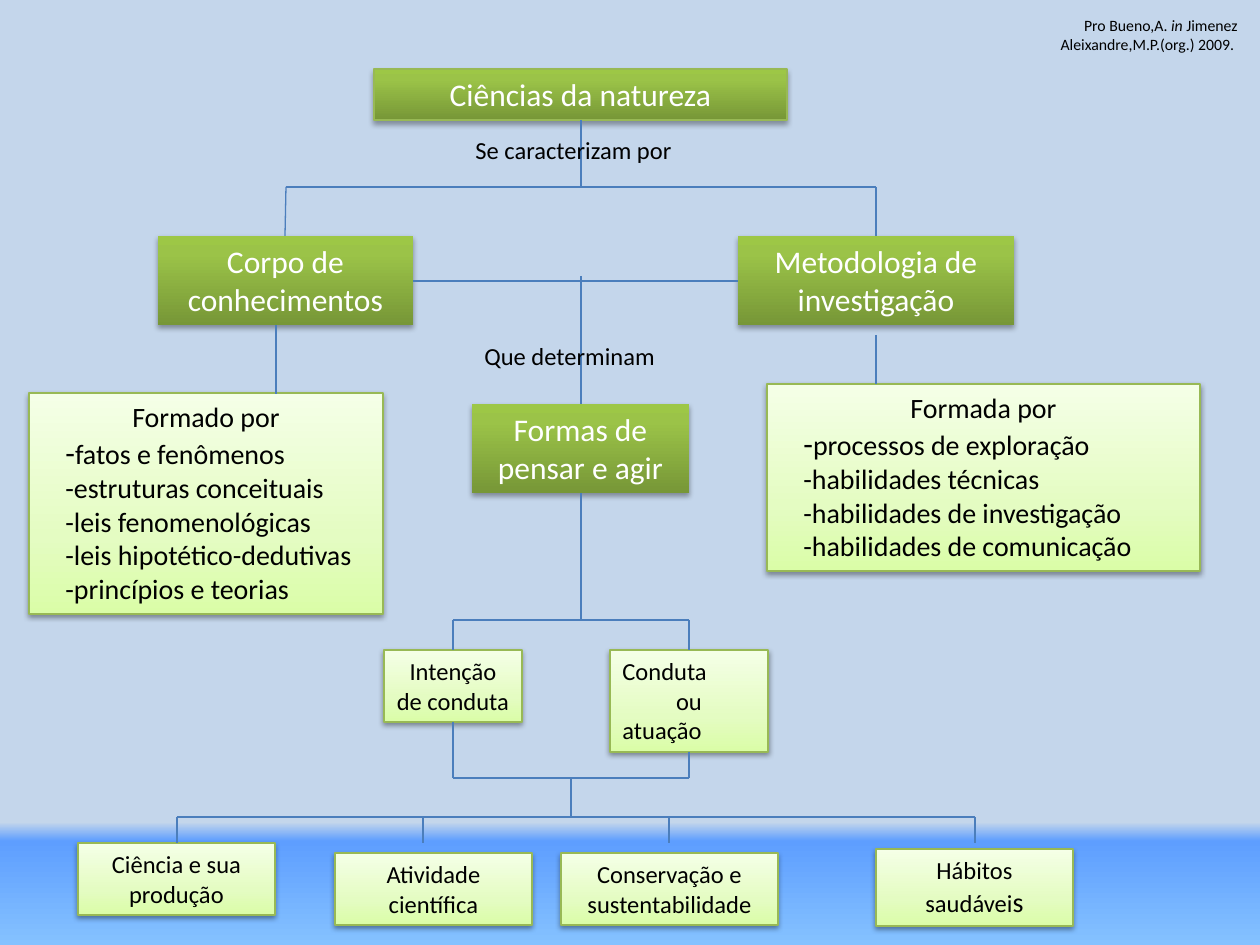
from dataclasses import dataclass

import lxml.etree
import pptx
import pptx.dml.color
import pptx.enum.shapes
import pptx.enum.text
import pptx.oxml.ns
import pptx.util

qn = pptx.oxml.ns.qn
Align = pptx.enum.text.PP_ALIGN
EMU_PER_PX = 914400 / 126


@dataclass(frozen=True)
class Style:
    stops: tuple
    line: str | None
    text: str
    shadow_alpha: int
    shadow_distance: float


@dataclass(frozen=True)
class Theme:
    font: str = "Calibri"
    text: str = "000000"
    connector: str = "4B7EBC"
    line_width: float = 0.75
    shadow: str = "000000"
    shadow_blur: float = 3.1
    background: tuple = ((87, "C4D6EB"), (89, "5E9EFF"), (100, "85C2FF"))
    title_size: int = 18
    list_size: int = 16
    label_size: int = 14
    credit_size: int = 9


THEME = Theme()
GREEN_STOPS = ((0, "779737"), (80, "9BC348"), (100, "9DC746"))
PALE_STOPS = ((0, "DAFDA7"), (35, "E4FCC2"), (100, "F5FFE7"))
TOPIC = Style(GREEN_STOPS, None, "FFFFFF", 35, 1.8)
ROOT = Style(GREEN_STOPS, "98B955", "FFFFFF", 35, 1.8)
DETAIL = Style(PALE_STOPS, "98B955", "000000", 38, 1.6)


@dataclass(frozen=True)
class Span:
    text: str
    size: int
    italic: bool = False


@dataclass(frozen=True)
class Para:
    spans: tuple[Span, ...]
    align: Align = Align.LEFT
    indent: int = 0


@dataclass(frozen=True)
class Box:
    left: int
    top: int
    width: int
    height: int
    paras: tuple[Para, ...]
    style: Style | None = None


def px(length: float) -> int:
    return round(length * EMU_PER_PX)


def rgb(color: str) -> pptx.dml.color.RGBColor:
    return pptx.dml.color.RGBColor.from_string(color)


def add_element(parent, tag: str, **attributes):
    return lxml.etree.SubElement(
        parent, qn(tag), {name: str(value) for name, value in attributes.items()})


def set_gradient(owner, fill, stops: tuple, angle: int) -> None:
    fill.gradient()
    gradient = owner.element.find(".//" + qn("a:gradFill"))
    for child in list(gradient):
        gradient.remove(child)
    stop_list = add_element(gradient, "a:gsLst")
    for position, color in stops:
        stop = add_element(stop_list, "a:gs", pos=position * 1000)
        add_element(stop, "a:srgbClr", val=color)
    add_element(gradient, "a:lin", ang=angle * 60000, scaled=0)


def add_shadow(shape, style: Style) -> None:
    shape.shadow.inherit = False
    effects = shape.element.spPr.find(qn("a:effectLst"))
    outer = add_element(effects, "a:outerShdw",
                        blurRad=pptx.util.Pt(THEME.shadow_blur),
                        dist=pptx.util.Pt(style.shadow_distance),
                        dir=90 * 60000, rotWithShape=0)
    color = add_element(outer, "a:srgbClr", val=THEME.shadow)
    add_element(color, "a:alpha", val=style.shadow_alpha * 1000)


def write_text(frame, paras: tuple[Para, ...], color: str) -> None:
    frame.word_wrap = True
    frame.auto_size = pptx.enum.text.MSO_AUTO_SIZE.SHAPE_TO_FIT_TEXT
    frame.vertical_anchor = pptx.enum.text.MSO_ANCHOR.TOP
    for index, para in enumerate(paras):
        paragraph = frame.add_paragraph() if index else frame.paragraphs[0]
        paragraph.alignment = para.align
        if para.indent:
            properties = paragraph._p.get_or_add_pPr()
            properties.set("marL", str(px(para.indent)))
            properties.set("indent", "0")
        for span in para.spans:
            run = paragraph.add_run()
            run.text = span.text
            run.font.name = THEME.font
            run.font.size = pptx.util.Pt(span.size)
            run.font.italic = span.italic
            run.font.color.rgb = rgb(color)


def draw_box(page, box: Box) -> None:
    place = [px(v) for v in (box.left, box.top, box.width, box.height)]
    style = box.style
    if style is None:
        shape = page.shapes.add_textbox(*place)
    else:
        shape = page.shapes.add_shape(
            pptx.enum.shapes.MSO_SHAPE.RECTANGLE, *place)
        set_gradient(shape, shape.fill, style.stops, 270)
        if style.line:
            shape.line.color.rgb = rgb(style.line)
            shape.line.width = pptx.util.Pt(THEME.line_width)
        else:
            shape.line.fill.background()
        add_shadow(shape, style)
    write_text(shape.text_frame, box.paras, style.text if style else THEME.text)


def draw_line(page, x1: int, y1: int, x2: int, y2: int) -> None:
    line = page.shapes.add_connector(
        pptx.enum.shapes.MSO_CONNECTOR.STRAIGHT, px(x1), px(y1), px(x2), px(y2))
    line.line.color.rgb = rgb(THEME.connector)
    line.line.width = pptx.util.Pt(THEME.line_width)
    add_element(line.element.spPr, "a:effectLst")


def single(text: str, size: int, align: Align = Align.CENTER) -> tuple[Para, ...]:
    return (Para((Span(text, size),), align),)


def listing(heading: str, first: str, *others: str) -> tuple[Para, ...]:
    size = THEME.list_size
    lead = Para((Span("-", THEME.title_size), Span(first, size)), indent=24)
    rest = (Para((Span("-" + item, size),), indent=24) for item in others)
    return (*single(heading, size), lead, *rest)


TITLE, LABEL = THEME.title_size, THEME.label_size
BOXES = (
    # Main topics
    Box(374, 69, 413, 51, single("Ciências da natureza", TITLE), ROOT),
    Box(158, 236, 255, 89, single("Corpo de conhecimentos", TITLE), TOPIC),
    Box(738, 236, 276, 89, single("Metodologia de investigação", TITLE), TOPIC),
    Box(472, 404, 217, 89, single("Formas de pensar e agir", TITLE), TOPIC),
    # Conduct
    Box(384, 650, 138, 72, single("Intenção de conduta", LABEL), DETAIL),
    Box(610, 650, 158, 102,
        single("Conduta", LABEL, Align.LEFT) + single("ou", LABEL)
        + single("atuação", LABEL, Align.LEFT), DETAIL),
    # Component lists
    Box(29, 393, 354, 221,
        listing("Formado por", "fatos e fenômenos", "estruturas conceituais",
                "leis fenomenológicas", "leis hipotético-dedutivas",
                "princípios e teorias"), DETAIL),
    Box(767, 384, 433, 187,
        listing("Formada por", "processos de exploração", "habilidades técnicas",
                "habilidades de investigação", "habilidades de comunicação"),
        DETAIL),
    # Outcomes
    Box(78, 843, 197, 72, single("Ciência e sua produção", LABEL), DETAIL),
    Box(335, 853, 197, 72, single("Atividade científica", LABEL), DETAIL),
    Box(561, 853, 217, 72, single("Conservação e sustentabilidade", LABEL), DETAIL),
    Box(876, 849, 197, 77,
        (Para((Span("Hábitos saudávei", LABEL), Span("s", THEME.list_size)),
              Align.CENTER),), DETAIL),
)

LINES = (
    # Root to the two branches
    (581, 120, 581, 187), (286, 187, 876, 187),
    (286, 187, 285, 236), (876, 187, 876, 236),
    # Between the branches and down to the ways of thinking
    (413, 281, 738, 281), (581, 276, 581, 404),
    # Branches to their lists
    (276, 325, 276, 394), (876, 335, 876, 384),
    # Around the conduct pair
    (581, 493, 581, 620), (453, 620, 689, 620), (453, 778, 689, 778),
    (453, 650, 453, 620), (689, 620, 689, 650),
    (453, 722, 453, 778), (689, 752, 689, 778),
    # Outcomes
    (571, 778, 571, 817), (177, 817, 975, 817),
    *((x, 817, x, 843) for x in (177, 423, 669, 975)),
)

CAPTIONS = (
    Box(463, 129, 266, 43, single("Se caracterizam por", LABEL, Align.LEFT)),
    Box(472, 335, 217, 43, single("Que determinam", LABEL, Align.LEFT)),
    Box(984, 10, 266, 51, (Para((
        Span("Pro Bueno,A. ", THEME.credit_size),
        Span("in", THEME.credit_size, italic=True),
        Span(" Jimenez Aleixandre,M.P.(org.) 2009. ", THEME.credit_size),
    ), Align.RIGHT),)),
)


def main() -> None:
    deck = pptx.Presentation()
    deck.slide_width, deck.slide_height = px(1260), px(945)
    page = deck.slides.add_slide(deck.slide_layouts[6])
    set_gradient(page, page.background.fill, THEME.background, 90)
    for box in BOXES:
        draw_box(page, box)
    for line in LINES:
        draw_line(page, *line)
    for caption in CAPTIONS:
        draw_box(page, caption)
    deck.save("out.pptx")


if __name__ == "__main__":
    main()
